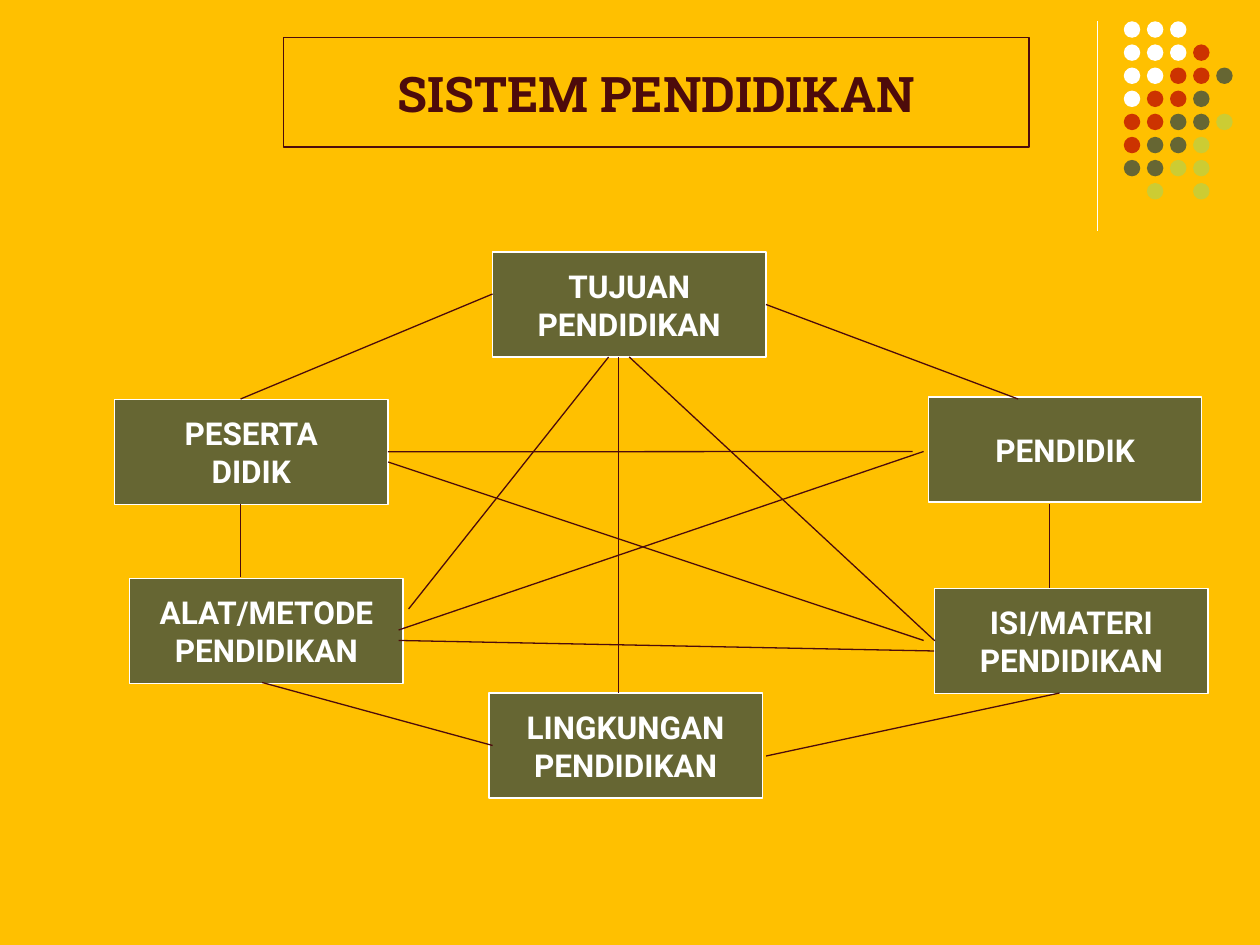
from pptx import Presentation
from pptx.dml.color import RGBColor
from pptx.enum.shapes import MSO_CONNECTOR, MSO_SHAPE
from pptx.enum.text import MSO_ANCHOR, PP_ALIGN
from pptx.util import Pt
from lxml.etree import SubElement
from pptx.oxml.ns import qn

# Content
TITLE = "SISTEM PENDIDIKAN"
BOXES = {  # name: (left, top, text lines)
    "goal": (281.5, 144, ["TUJUAN", "PENDIDIKAN"]),
    "tool": (74.2, 330.5, ["ALAT/METODE", "PENDIDIKAN"]),
    "pupil": (65.5, 228.2, ["PESERTA", "DIDIK"]),
    "matter": (534.2, 336.2, ["ISI/MATERI", "PENDIDIKAN"]),
    "teacher": (530.6, 226.8, ["PENDIDIK"]),
    "setting": (279.4, 396, ["LINGKUNGAN", "PENDIDIKAN"]),
}
LINKS = [  # start, end, box side joined at start, box side joined at end
    ((437.7, 174), (581.8, 228), ("goal", 3), None),
    ((599.8, 288), (599.8, 336), None, None),
    ((605.5, 396), (437.8, 432), None, None),
    ((149.8, 390), (281.5, 426), None, None),
    ((137.5, 288), (137.5, 330), None, None),
    ((281.5, 168), (137.5, 228), None, None),
    ((353.5, 204), (353.5, 396), None, None),
    ((221.7, 258.2), (521.5, 258), ("pupil", 3), None),
    ((227.8, 366), (533.8, 372), None, None),
    ((527.8, 258), (227.8, 360), None, None),
    ((221.8, 264), (527.8, 366), None, None),
    ((233.5, 348), (347.8, 204), None, None),
    ((359.6, 204), (534.2, 366.2), ("goal", 2), ("matter", 1)),
]
DOTS = ["www", "wwwr", "wwrrg", "wrrg", "rrggl", "rggl", "ggll", " l l"]

# Look
COLORS = {"back": "FFC000", "ink": "4D0B0B", "w": "FFFFFF",
          "r": "CC3300", "g": "666633", "l": "CCCC33"}
HEAD = {"name": "Roboto Slab", "size": Pt(28), "bold": True}
LABEL = {"name": "Roboto", "size": Pt(18), "bold": True}
BOX_W, BOX_H = 156.2, 60
DOT_X, DOT_Y, DOT, STEP = 642.2, 12.2, 9.4, 13.2


def tint(key):
    return RGBColor.from_string(COLORS[key])


def shape(kind, x, y, w, h, fill=None, edge=None):
    item = deck.shapes.add_shape(kind, Pt(x), Pt(y), Pt(w), Pt(h))
    item.shadow.inherit = False
    if fill:
        item.fill.solid()
        item.fill.fore_color.rgb = tint(fill)
    else:
        item.fill.background()
    if edge:
        item.line.color.rgb = tint(edge)
        item.line.width = Pt(0.75)
    else:
        item.line.fill.background()
    return item


def write(item, lines, look, color, wrap):
    frame = item.text_frame
    frame.word_wrap = wrap
    frame.vertical_anchor = MSO_ANCHOR.MIDDLE
    for i, line in enumerate(lines):
        para = frame.add_paragraph() if i else frame.paragraphs[0]
        para.alignment = PP_ALIGN.CENTER
        run = para.add_run()
        run.text = line
        for key, value in look.items():
            setattr(run.font, key, value)
        run.font.color.rgb = tint(color)


def link(start, end, color):
    item = deck.shapes.add_connector(
        MSO_CONNECTOR.STRAIGHT, *(Pt(v) for v in start + end))
    item.line.color.rgb = tint(color)
    item.line.width = Pt(0.75)
    SubElement(item._element.spPr, qn("a:effectLst"))
    return item


show = Presentation()
show.slide_width, show.slide_height = Pt(720), Pt(540)
deck = show.slides.add_slide(show.slide_layouts[6])
deck.background.fill.solid()
deck.background.fill.fore_color.rgb = tint("back")

# Corner rule and dots
link((627, 12), (627, 132), "w")
for row, keys in enumerate(DOTS):
    for col, key in enumerate(keys):
        if key != " ":
            shape(MSO_SHAPE.OVAL, DOT_X + col * STEP, DOT_Y + row * STEP,
                  DOT, DOT, key)

# Title
head = shape(MSO_SHAPE.RECTANGLE, 162, 21.6, 426, 62.4, edge="ink")
write(head, [TITLE], HEAD, "ink", True)

# Boxes
nodes = {}
for name, (x, y, lines) in BOXES.items():
    nodes[name] = shape(MSO_SHAPE.RECTANGLE, x, y, BOX_W, BOX_H, "g", "w")
    write(nodes[name], lines, LABEL, "w", False)

# Links
for start, end, tail, tip in LINKS:
    line = link(start, end, "ink")
    if tail:
        line.begin_connect(nodes[tail[0]], tail[1])
    if tip:
        line.end_connect(nodes[tip[0]], tip[1])

show.save("out.pptx")
